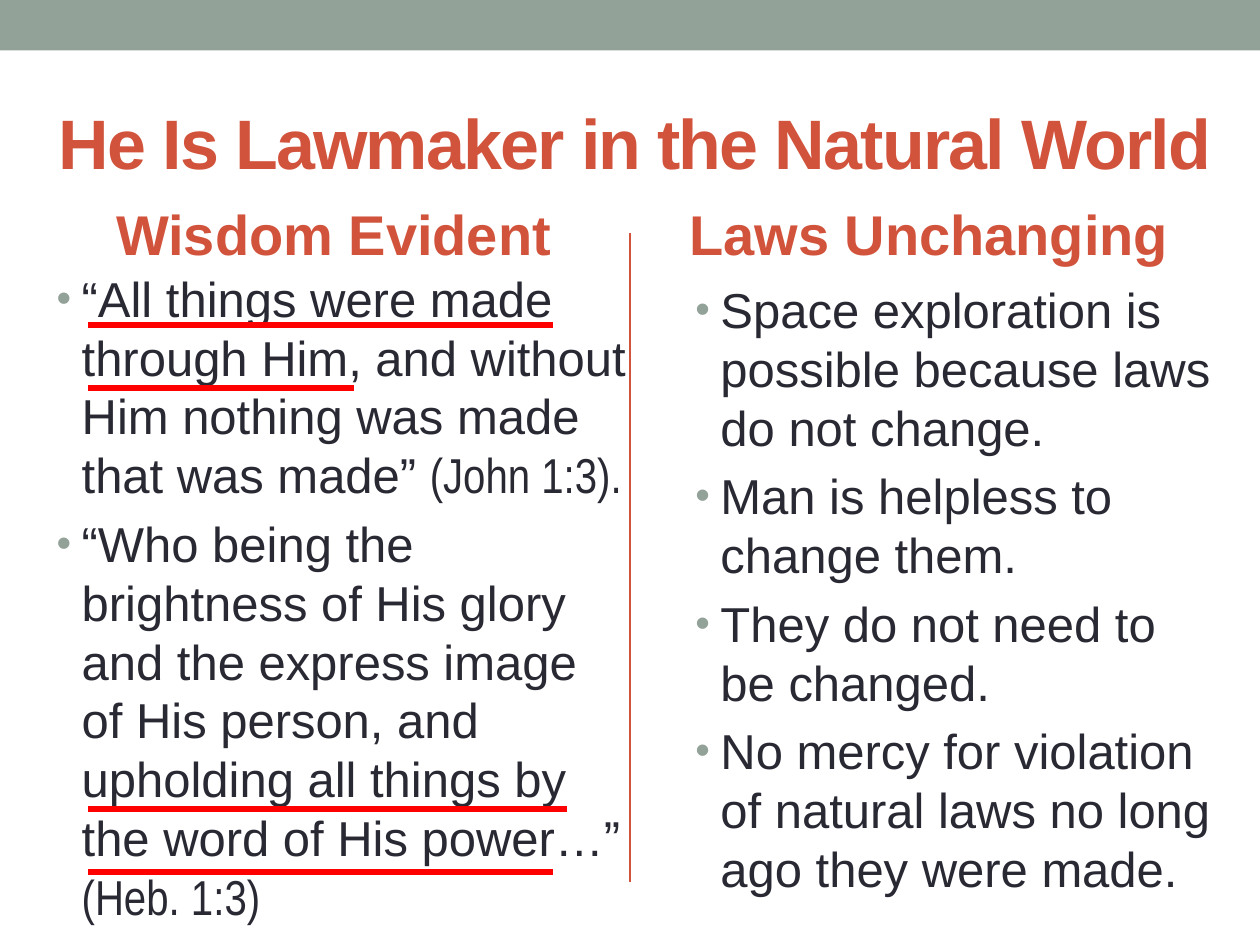
import pptx
import pptx.util
import pptx.dml.color
import pptx.enum.shapes
import pptx.enum.text
import pptx.oxml
import pptx.oxml.ns
import lxml.etree

Inches = pptx.util.Inches
Pt = pptx.util.Pt
RGBColor = pptx.dml.color.RGBColor
PP_ALIGN = pptx.enum.text.PP_ALIGN
MSO_ANCHOR = pptx.enum.text.MSO_ANCHOR

SAGE = RGBColor(0x93, 0xA2, 0x99)
RUST = RGBColor(0xD2, 0x53, 0x3C)
INK = RGBColor(0x29, 0x29, 0x34)
RED = RGBColor(0xFF, 0x00, 0x00)

prs = pptx.Presentation()
prs.slide_width, prs.slide_height = Inches(10), Inches(7.5)
slide = prs.slides.add_slide(prs.slide_layouts[5])


def add_rule(x1, y1, x2, y2, color, weight):
    rule = slide.shapes.add_connector(
        pptx.enum.shapes.MSO_CONNECTOR.STRAIGHT,
        Inches(x1), Inches(y1), Inches(x2), Inches(y2))
    rule.line.color.rgb = color
    rule.line.width = Pt(weight)
    lxml.etree.SubElement(rule._element.spPr, pptx.oxml.ns.qn("a:effectLst"))


def add_run(paragraph, text, size, color, bold=False, font="Arial"):
    run = paragraph.add_run()
    run.text = text
    run.font.name = font
    run.font.size = Pt(size)
    run.font.bold = bold
    run.font.color.rgb = color
    return run


# Top band and column divider
band = slide.shapes.add_shape(pptx.enum.shapes.MSO_SHAPE.RECTANGLE,
                              0, 0, Inches(10), Inches(0.4))
band.shadow.inherit = False
band.fill.solid()
band.fill.fore_color.rgb = SAGE
band.line.fill.background()
add_rule(5, 1.85, 5, 7, RUST, 1.5)

# Title
title = slide.shapes.title
title.left, title.top = Inches(0.33), Inches(0.58)
title.width, title.height = Inches(9.42), Inches(1.08)
title.text_frame.vertical_anchor = MSO_ANCHOR.MIDDLE
title_line = title.text_frame.paragraphs[0]
title_line.alignment = PP_ALIGN.CENTER
title_run = add_run(title_line, "He Is Lawmaker in the Natural World", 40, RUST, True)
title_run.font._element.set("spc", "-100")

# Column headings
for text, left, width in [("Wisdom Evident", 0.5, 4.3),
                          ("Laws Unchanging ", 5.2, 4.47)]:
    heading = slide.shapes.add_textbox(Inches(left), Inches(1.5),
                                       Inches(width), Inches(0.7)).text_frame
    heading.word_wrap = True
    heading.vertical_anchor = MSO_ANCHOR.MIDDLE
    heading_line = heading.paragraphs[0]
    heading_line.alignment = PP_ALIGN.CENTER
    add_run(heading_line, text, 32, RUST, True)

# Bulleted columns: each point is its lines and an optional verse reference
wisdom = [
    (["“All things were made through Him, and without Him nothing was made "
      "that was made” "], "(John 1:3)."),
    (["“Who being the brightness of His glory and the express image",
      "of His person, and upholding all things by",
      "the word of His power…” "], "(Heb. 1:3)"),
]
laws = [
    (["Space exploration is possible because laws do not change."], ""),
    (["Man is helpless to change them."], ""),
    (["They do not need to be changed."], ""),
    (["No mercy for violation of natural laws no long ago they were made."], ""),
]
BULLET = [
    f'<a:buClr {pptx.oxml.ns.nsdecls("a")}><a:srgbClr val="{SAGE}"/></a:buClr>',
    f'<a:buSzPct {pptx.oxml.ns.nsdecls("a")} val="85000"/>',
    f'<a:buFont {pptx.oxml.ns.nsdecls("a")} typeface="Arial"/>',
    f'<a:buChar {pptx.oxml.ns.nsdecls("a")} char="•"/>',
]
for points, left, top, width, height in [(wisdom, 0.35, 2.08, 4.92, 4.32),
                                         (laws, 5.42, 2.17, 4.33, 5.17)]:
    column = slide.shapes.add_textbox(Inches(left), Inches(top),
                                      Inches(width), Inches(height)).text_frame
    column.word_wrap = True
    for i, (lines, verse) in enumerate(points):
        point = column.add_paragraph() if i else column.paragraphs[0]
        point.line_spacing = 1.0
        point.space_before = Pt(5.6 if i else 0)
        properties = point._p.get_or_add_pPr()
        properties.set("marL", str(Inches(0.2)))
        properties.set("indent", str(Inches(-0.2)))
        for part in BULLET:
            properties.append(pptx.oxml.parse_xml(part))
        for j, line in enumerate(lines):
            if j:
                point.add_line_break()
            add_run(point, line, 28, INK)
        if verse:
            add_run(point, verse, 28, INK, font="Arial Narrow")

# Red underlines beneath the key phrases
for y, end in [(2.58, 4.39), (3.08, 2.81), (6.42, 4.5), (6.92, 4.39)]:
    add_rule(0.7, y, end, y, RED, 3)

prs.save("out.pptx")
